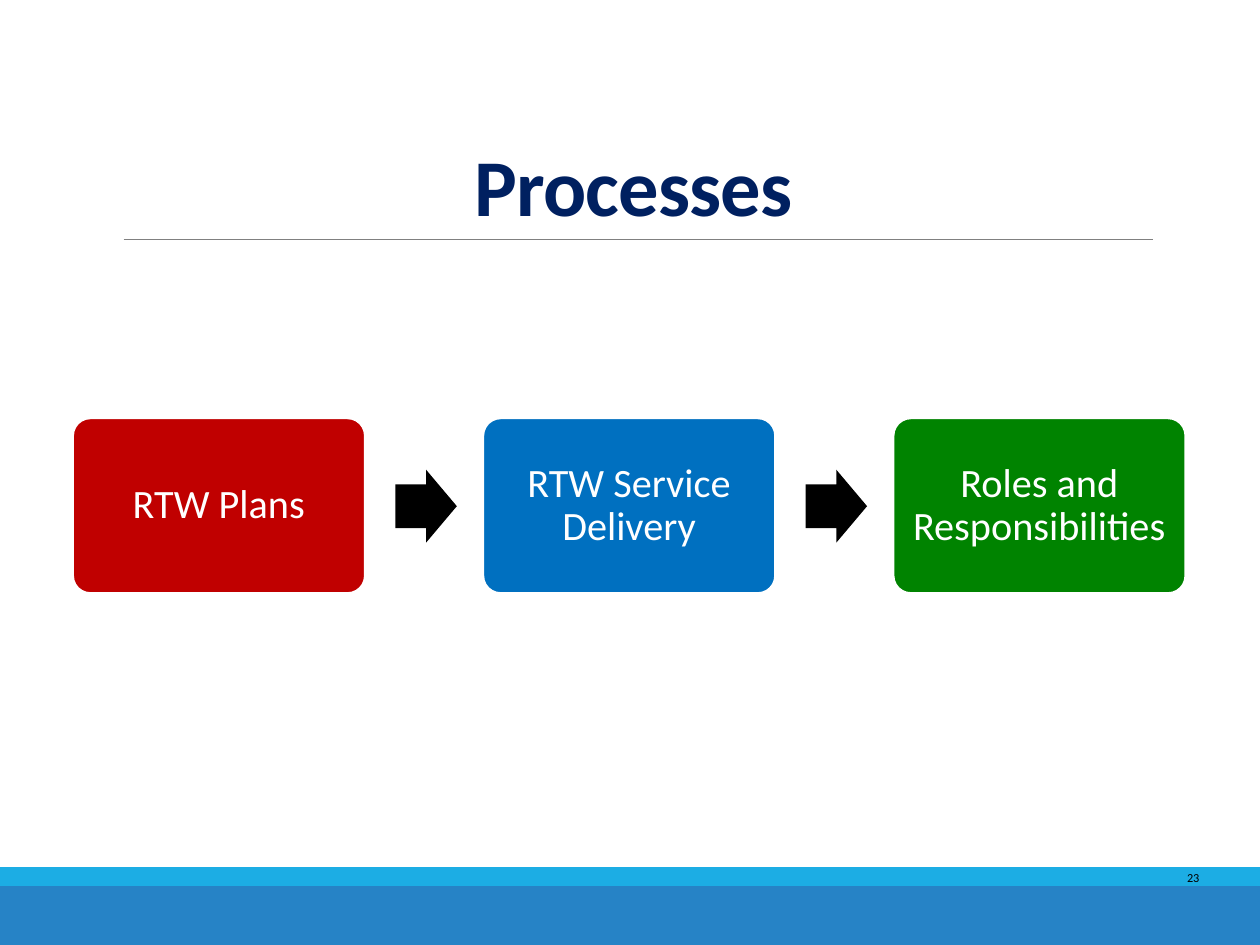
import pptx
import pptx.util
import pptx.dml.color
import pptx.enum.shapes
import pptx.enum.text
import pptx.oxml.ns
from lxml import etree

Cm, Pt = pptx.util.Cm, pptx.util.Pt
RGB = pptx.dml.color.RGBColor
SHAPE = pptx.enum.shapes.MSO_SHAPE
ANCHOR = pptx.enum.text.MSO_ANCHOR

WHITE = RGB(0xFF, 0xFF, 0xFF)
BLACK = RGB(0, 0, 0)
GRAY = RGB(0x80, 0x80, 0x80)
NAVY = RGB(0x00, 0x20, 0x60)
BAND_BLUE = RGB(0x26, 0x83, 0xC6)
BAND_CYAN = RGB(0x1C, 0xAD, 0xE4)
RED = RGB(0xC0, 0x00, 0x00)
BLUE = RGB(0x00, 0x70, 0xC0)
GREEN = RGB(0x00, 0x83, 0x00)


def write(tf, text, size, color, font="Calibri", bold=False, line=1.0,
          spacing=None, anchor=ANCHOR.TOP):
    """Put one centred, formatted paragraph in a text frame."""
    tf.word_wrap = True
    tf.vertical_anchor = anchor
    p = tf.paragraphs[0]
    p.alignment = pptx.enum.text.PP_ALIGN.CENTER
    p.line_spacing = line
    r = p.add_run()
    r.text = text
    r.font.name, r.font.size, r.font.bold = font, Pt(size), bold
    r.font.color.rgb = color
    if spacing is not None:
        r.font._element.set("spc", str(int(spacing * 100)))


class Builder:
    font = "Calibri"

    def __init__(self, s):
        self.s = s

    def shape(self, kind, x, y, w, h, fill, adj=(), line=None):
        sp = self.s.shapes.add_shape(kind, Cm(x), Cm(y), Cm(w), Cm(h))
        sp.shadow.inherit = False
        sp.fill.solid()
        sp.fill.fore_color.rgb = fill
        if line is None:
            sp.line.fill.background()
        else:
            sp.line.color.rgb = line
            sp.line.width = Pt(1.25)
        for i, value in enumerate(adj):
            sp.adjustments[i] = value
        return sp

    def rule(self, x1, x2, y, color):
        sp = self.s.shapes.add_connector(
            pptx.enum.shapes.MSO_CONNECTOR.STRAIGHT, Cm(x1), Cm(y), Cm(x2), Cm(y))
        sp.line.color.rgb = color
        sp.line.width = Pt(0.5)
        etree.SubElement(sp._element.spPr, pptx.oxml.ns.qn("a:effectLst"))

    def text(self, x, y, w, h, text, **fmt):
        sp = self.s.shapes.add_textbox(Cm(x), Cm(y), Cm(w), Cm(h))
        write(sp.text_frame, text, font=self.font, **fmt)

    def step(self, x, y, w, h, text, fill):
        sp = self.shape(SHAPE.ROUNDED_RECTANGLE, x, y, w, h, fill, [0.1], WHITE)
        tf = sp.text_frame
        tf.margin_left = tf.margin_right = tf.margin_top = tf.margin_bottom = Cm(0.25)
        write(tf, text, font=self.font, size=23, color=WHITE, line=0.9,
              anchor=ANCHOR.MIDDLE)


def main():
    prs = pptx.Presentation()
    prs.slide_width, prs.slide_height = Cm(25.4), Cm(19.05)
    b = Builder(prs.slides.add_slide(prs.slide_layouts[6]))

    # Footer bands and page number
    b.shape(SHAPE.RECTANGLE, 0, 17.78, 25.4, 1.27, BAND_BLUE)
    b.shape(SHAPE.RECTANGLE, 0, 17.48, 25.4, 0.38, BAND_CYAN)
    b.text(23.24, 17.42, 1.63, 0.58, "23", size=7, color=BLACK)

    # Title with rule
    b.rule(2.49, 23.24, 4.83, GRAY)
    b.text(2.29, 0.79, 20.96, 4.04, "Processes", size=46, color=NAVY, bold=True,
           line=0.85, spacing=-0.5, anchor=ANCHOR.BOTTOM)

    # Process steps, with an arrow before each one but the first
    left, pitch = 1.47, 8.27
    steps = [("RTW Plans", RED), ("RTW Service Delivery", BLUE),
             ("Roles and Responsibilities", GREEN)]
    for i, (label, fill) in enumerate(steps):
        x = left + i * pitch
        if i:
            b.shape(SHAPE.RIGHT_ARROW, x - 1.77, 9.47, 1.24, 1.47, BLACK, [0.6, 0.5])
        b.step(x, 8.43, 5.89, 3.53, label, fill)

    prs.save("out.pptx")


if __name__ == "__main__":
    main()
